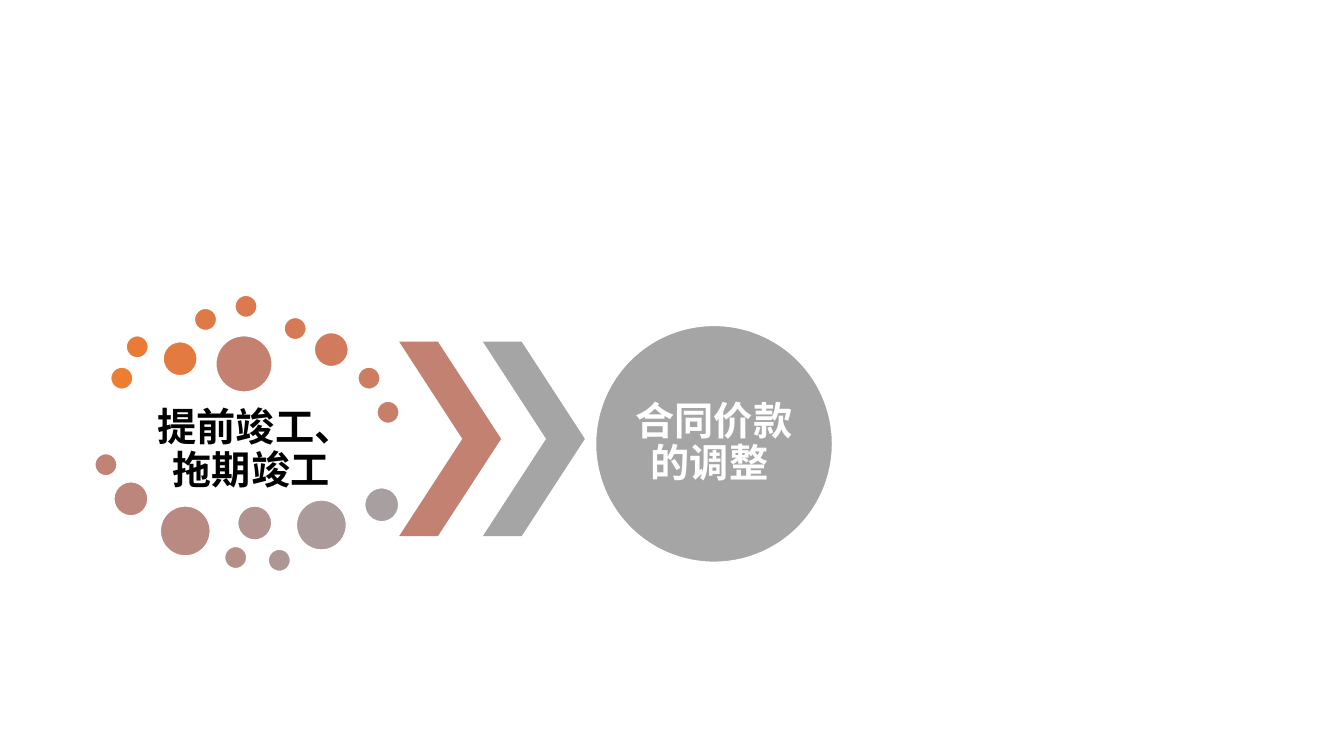
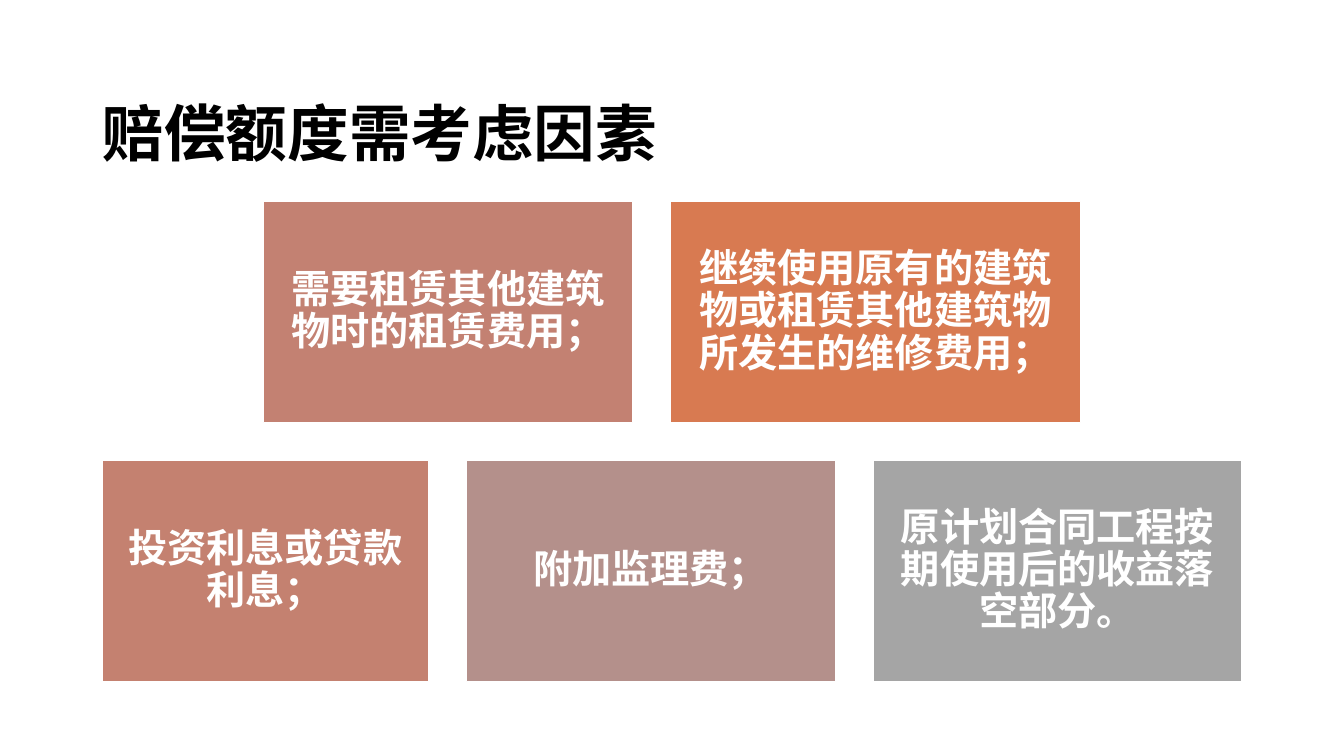
import colorsys
from dataclasses import dataclass

from pptx import Presentation
from pptx import util as u
from pptx.dml.color import RGBColor
from pptx.enum import shapes, text

ORANGE = RGBColor(0xED, 0x7D, 0x31)
ROSE = RGBColor(0xC3, 0x81, 0x72)
GREY = RGBColor(0xA5, 0xA5, 0xA5)
WHITE = RGBColor(0xFF, 0xFF, 0xFF)
BLACK = RGBColor(0x00, 0x00, 0x00)

FONT = "Times New Roman"
LABEL = {"size": u.Pt(28), "bold": True, "name": FONT}
TITLE = {"size": u.Pt(44), "bold": True, "name": FONT}
CENTER = {"alignment": text.PP_ALIGN.CENTER, "line_spacing": 0.9}
JUSTIFY = {"alignment": text.PP_ALIGN.JUSTIFY, "line_spacing": 1.5}

SLIDE_W, SLIDE_H = 33.87, 19.05
SMALL, MEDIUM, LARGE, HUGE = 0.56, 0.86, 1.26, 1.42


@dataclass(frozen=True)
class Box:
    left: float
    top: float
    width: float
    height: float

    def cm(self) -> tuple:
        return tuple(u.Cm(v) for v in (self.left, self.top, self.width, self.height))


@dataclass(frozen=True)
class Dot:
    left: float
    top: float
    size: float


@dataclass(frozen=True)
class Card:
    words: str
    width: float
    color: RGBColor


def blend(t: float) -> RGBColor:
    a, b = (colorsys.rgb_to_hls(*(c / 255 for c in rgb)) for rgb in (ORANGE, GREY))
    hls = (x + (y - x) * t for x, y in zip(a, b))
    return RGBColor(*(round(c * 255) for c in colorsys.hls_to_rgb(*hls)))


DOTS = [
    Dot(2.79, 9.25, SMALL),
    Dot(3.18, 8.46, SMALL),
    Dot(4.11, 8.61, MEDIUM),
    Dot(4.9, 7.77, SMALL),
    Dot(5.92, 7.44, SMALL),
    Dot(7.16, 8, SMALL),
    Dot(7.92, 8.38, MEDIUM),
    Dot(9.02, 9.25, SMALL),
    Dot(9.5, 10.11, SMALL),
    Dot(5.44, 8.46, HUGE),
    Dot(2.39, 11.43, SMALL),
    Dot(2.87, 12.14, MEDIUM),
    Dot(4.04, 12.75, LARGE),
    Dot(5.66, 13.77, SMALL),
    Dot(5.99, 12.75, MEDIUM),
    Dot(6.76, 13.84, SMALL),
    Dot(7.47, 12.6, LARGE),
    Dot(9.19, 12.29, MEDIUM),
]

CARD_ROWS = [
    [
        Card("需要租赁其他建筑物时的租赁费用；", 9.3, ROSE),
        Card("继续使用原有的建筑物或租赁其他建筑物所发生的维修费用；", 10.34, blend(0.25)),
    ],
    [
        Card("投资利息或贷款利息；", 8.23, blend(0.5)),
        Card("附加监理费；", 9.3, blend(0.75)),
        Card("原计划合同工程按期使用后的收益落空部分。", 9.3, GREY),
    ],
]
CARD_TOP, CARD_H, CARD_GAP = 5.08, 5.57, 0.95


def apply(target, values: dict) -> None:
    for name, value in values.items():
        setattr(target, name, value)


def write(sp, words: str, color: RGBColor, font: dict, para: dict,
          inset_x: float, inset_y: float) -> None:
    tf = sp.text_frame
    apply(tf, {
        "word_wrap": True,
        "vertical_anchor": text.MSO_ANCHOR.MIDDLE,
        "margin_left": u.Cm(inset_x),
        "margin_right": u.Cm(inset_x),
        "margin_top": u.Cm(inset_y),
        "margin_bottom": u.Cm(inset_y),
    })
    p = tf.paragraphs[0]
    apply(p, para)
    r = p.add_run()
    r.text = words
    apply(r.font, font)
    r.font.color.rgb = color


def add_shape(s, kind: shapes.MSO_SHAPE, box: Box, color: RGBColor, outlined: bool = True):
    sp = s.shapes.add_shape(kind, *box.cm())
    sp.shadow.inherit = False
    sp.fill.solid()
    sp.fill.fore_color.rgb = color
    if outlined:
        sp.line.color.rgb = WHITE
        sp.line.width = u.Pt(1)
    else:
        sp.line.fill.background()
    return sp


def add_text(s, box: Box, words: str, font: dict, para: dict,
             inset_x: float, inset_y: float) -> None:
    sp = s.shapes.add_textbox(*box.cm())
    write(sp, words, BLACK, font, para, inset_x, inset_y)


def build_adjustment(s) -> None:
    add_text(s, Box(3.81, 10.19, 5.26, 2.31), "提前竣工、拖期竣工 ", LABEL, CENTER, 0.1, 0.1)
    for i, dot in enumerate(DOTS):
        box = Box(dot.left, dot.top, dot.size, dot.size)
        add_shape(s, shapes.MSO_SHAPE.OVAL, box, blend(i / len(DOTS)))
    for left, color in ((10.06, ROSE), (12.17, GREY)):
        box = Box(left, 8.61, 2.57, 4.9)
        sp = add_shape(s, shapes.MSO_SHAPE.CHEVRON, box, color, outlined=False)
        sp.adjustments[0] = 0.62
    circle = add_shape(s, shapes.MSO_SHAPE.OVAL, Box(15.01, 8.2, 5.97, 5.97), GREY)
    write(circle, "合同价款的调整 ", WHITE, LABEL, CENTER, 0, 0)


def build_factors(s) -> None:
    add_text(s, Box(2.34, 1.02, 29.21, 3.68), "赔偿额度需考虑因素", TITLE, JUSTIFY, 0.25, 0.13)
    for i, row in enumerate(CARD_ROWS):
        row_w = sum(card.width for card in row) + CARD_GAP * (len(row) - 1)
        left = (SLIDE_W - row_w) / 2
        top = CARD_TOP + i * (CARD_H + CARD_GAP)
        for card in row:
            box = Box(left, top, card.width, CARD_H)
            sp = add_shape(s, shapes.MSO_SHAPE.RECTANGLE, box, card.color)
            write(sp, card.words, WHITE, LABEL, CENTER, 0.3, 0.3)
            left += card.width + CARD_GAP


def main() -> None:
    prs = Presentation()
    prs.slide_width, prs.slide_height = u.Cm(SLIDE_W), u.Cm(SLIDE_H)
    for build in (build_adjustment, build_factors):
        build(prs.slides.add_slide(prs.slide_layouts[6]))
    prs.save("out.pptx")


if __name__ == "__main__":
    main()
